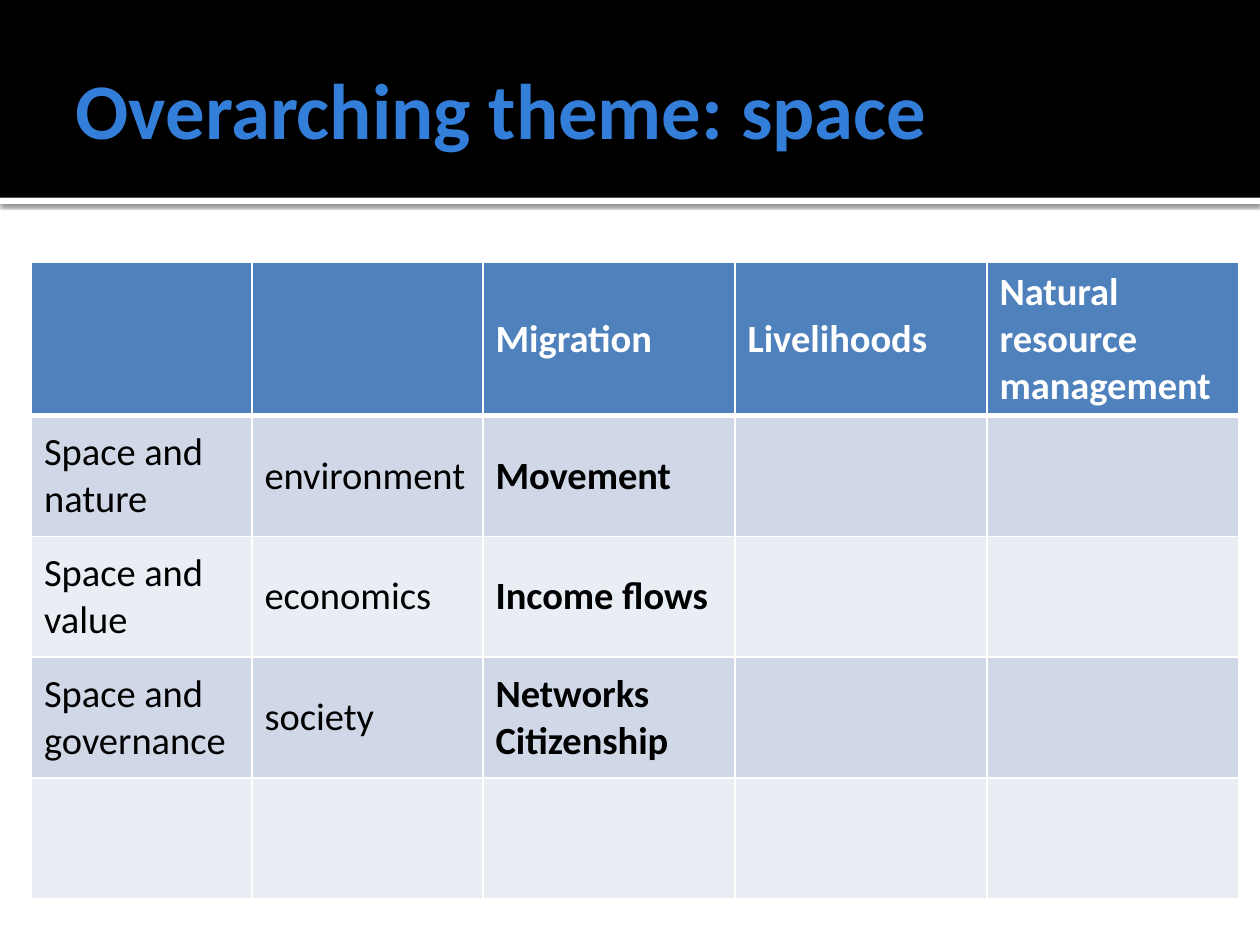
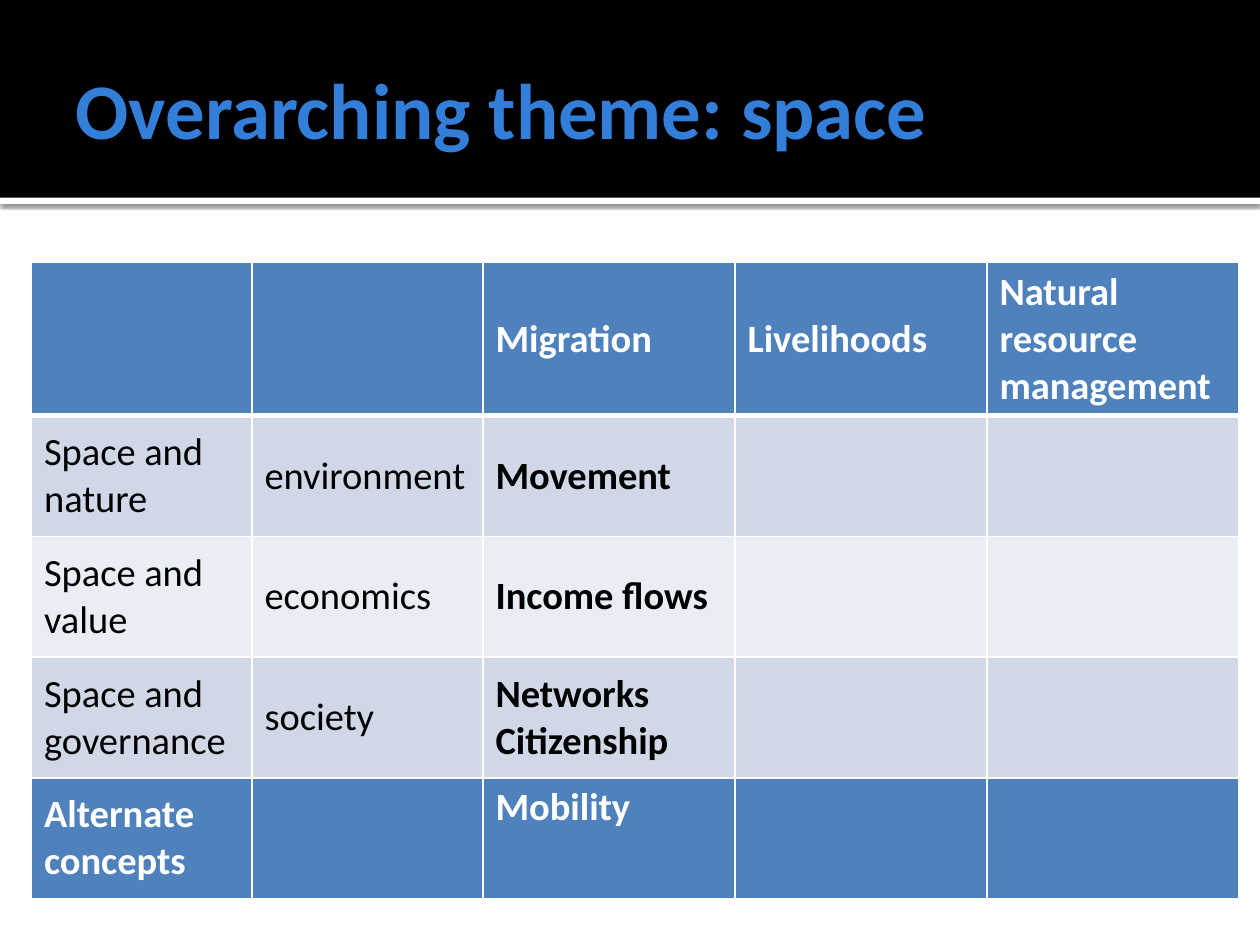
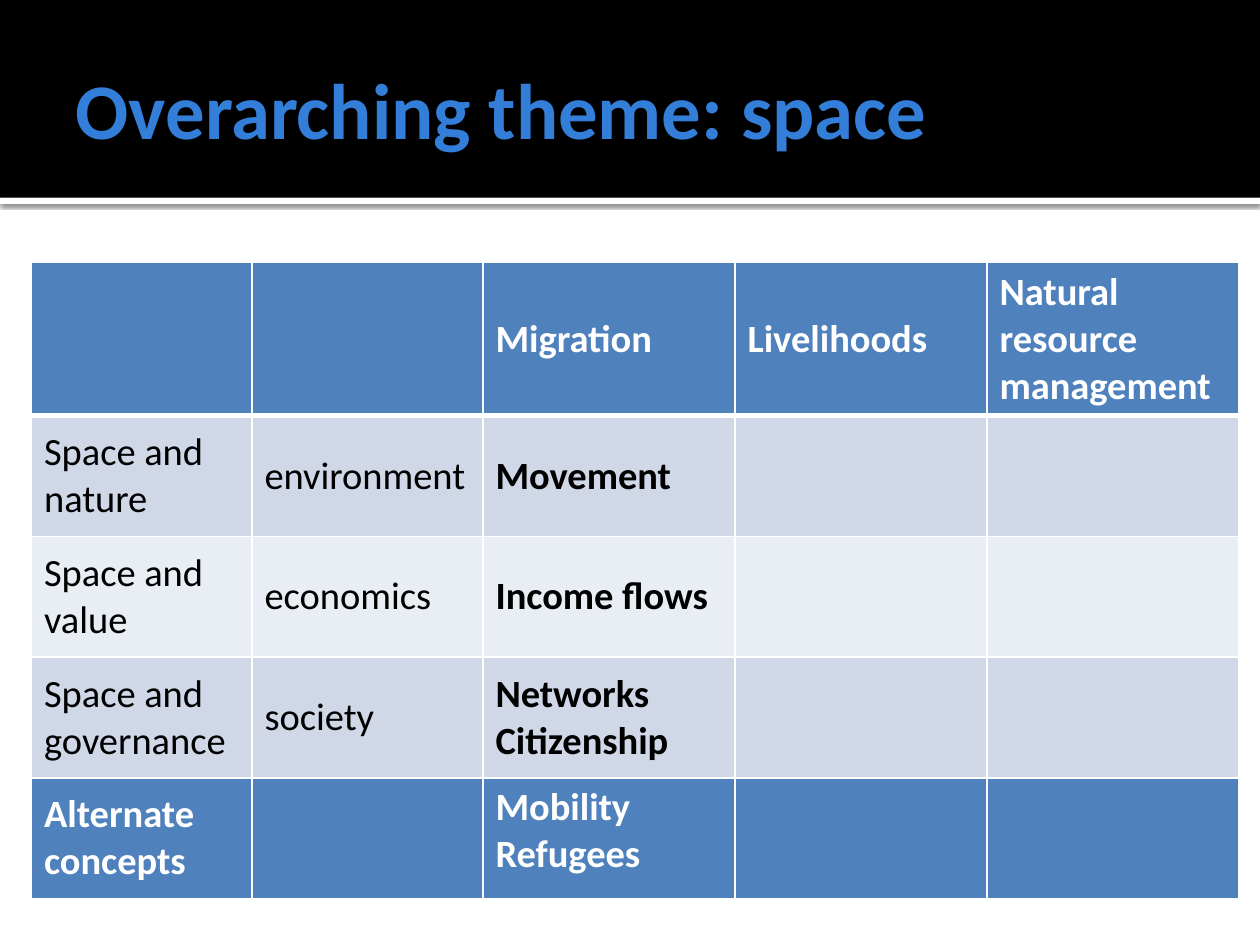
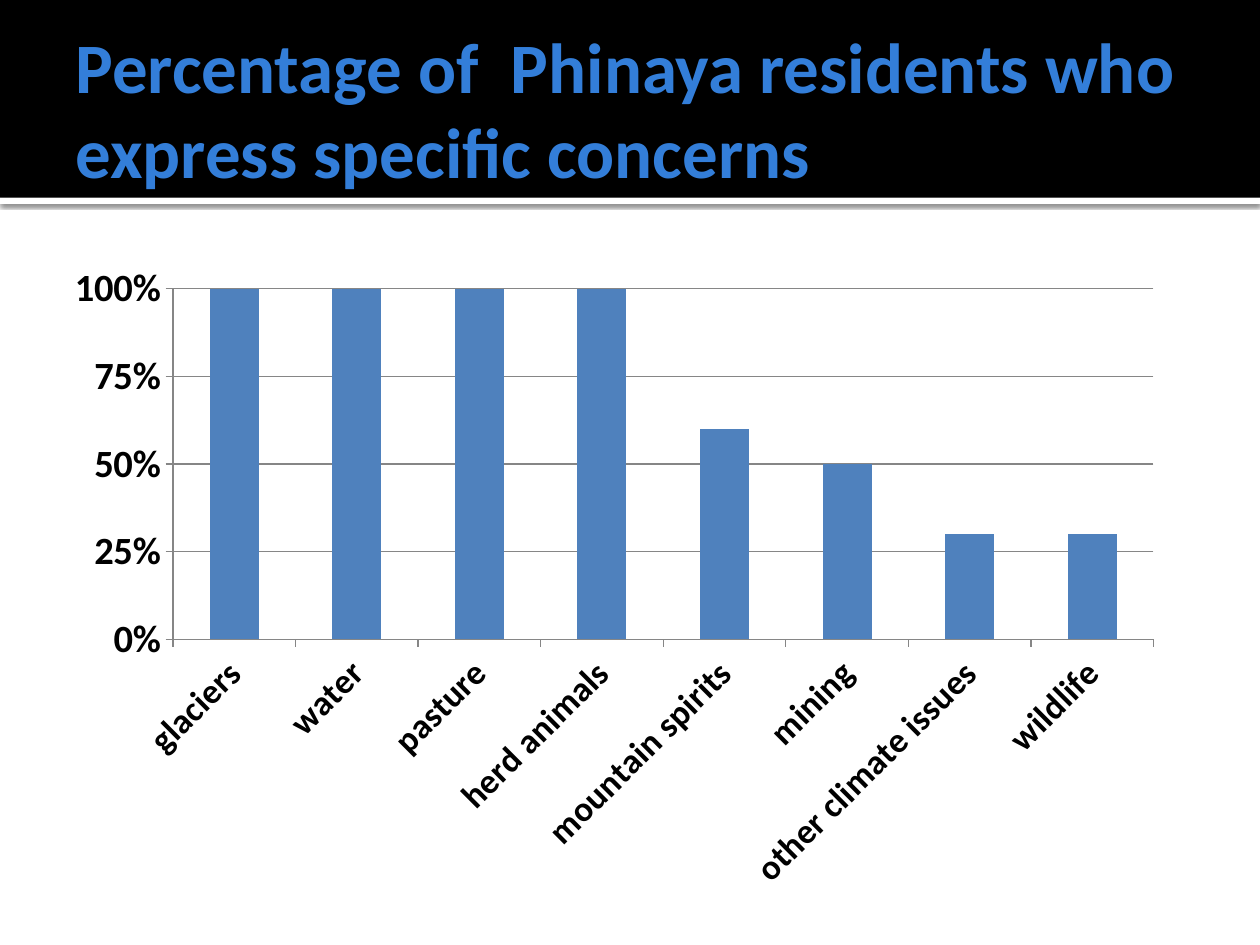
"""Build four slides on space as a theme and on residents' concerns."""
from lxml import etree
from pptx import Presentation
from pptx.chart.data import CategoryChartData
from pptx.dml.color import RGBColor
from pptx.enum.chart import XL_CHART_TYPE, XL_TICK_MARK
from pptx.enum.shapes import MSO_SHAPE
from pptx.enum.text import MSO_ANCHOR, MSO_AUTO_SIZE, PP_ALIGN
from pptx.oxml import parse_xml
from pptx.oxml.ns import nsdecls
from pptx.util import Pt

RECT = MSO_SHAPE.RECTANGLE
TOP, MIDDLE = MSO_ANCHOR.TOP, MSO_ANCHOR.MIDDLE
LEFT = PP_ALIGN.LEFT
FIXED = MSO_AUTO_SIZE.NONE
STACKED = XL_CHART_TYPE.COLUMN_STACKED
OUT = XL_TICK_MARK.OUTSIDE

BLACK = RGBColor(0x00, 0x00, 0x00)
WHITE = RGBColor(0xFF, 0xFF, 0xFF)
AZURE = RGBColor(0x33, 0x7E, 0xD9)
BLUE = RGBColor(0x4F, 0x81, 0xBD)
PALE = RGBColor(0xD0, 0xD8, 0xE8)
LIGHT = RGBColor(0xE9, 0xED, 0xF4)
GREY = RGBColor(0x86, 0x86, 0x86)

FACE = "Calibri"
WIDE, HIGH = 720, 540
BAND = 113
THEME = "Overarching theme: space"
WIDTHS = (126, 132, 144, 144, 144)
HEIGHTS = (84, 69, 69, 69, 69)
BODY = (
    ("", "", "Migration", "Livelihoods", "Natural resource management"),
    ("Space and nature", "environment", "Movement", "", ""),
    ("Space and value", "economics", "Income flows", "", ""),
    ("Space and governance", "society", "Networks\nCitizenship", "", ""),
)
LASTS = (
    ("", "", "", "", ""),
    ("Alternate concepts", "", "Mobility", "", ""),
    ("Alternate concepts", "", "Mobility\nRefugees", "", ""),
)
SHARES = {
    "glaciers": 1, "water": 1, "pasture": 1, "herd animals": 1,
    "mountain spirits": 0.6, "mining": 0.5,
    "other climate issues": 0.3, "wildlife": 0.3,
}


def apply(obj, **vals):
    """Set each named value on an object."""
    for name, val in vals.items():
        setattr(obj, name, val)


def style(font, size, color, bold):
    """Give a font its face, size, colour and weight."""
    apply(font, name=FACE, size=Pt(size), bold=bold)
    font.color.rgb = color


def paint(target, color):
    """Fill a shape or cell with one colour."""
    target.fill.solid()
    target.fill.fore_color.rgb = color


def add_band(slide, top, height, color):
    """Draw a full-width band and return it."""
    band = slide.shapes.add_shape(RECT, 0, Pt(top), Pt(WIDE), Pt(height))
    paint(band, color)
    band.line.fill.background()
    band.shadow.inherit = False
    return band


def cast_shade(shape):
    """Put a soft shadow below a shape."""
    shade = parse_xml(
        f'<a:outerShdw {nsdecls("a")} blurRad="{Pt(2.5)}" dist="{Pt(0.8)}" '
        'dir="5400000" algn="tl" rotWithShape="0"><a:srgbClr val="000000">'
        '<a:alpha val="60000"/></a:srgbClr></a:outerShdw>')
    shape._element.spPr.find("{*}effectLst").append(shade)


def dress_layout(slide):
    """Move the shared bands to the layout of a slide."""
    rule = add_band(slide, BAND, 3.6, WHITE)
    cast_shade(rule)
    head = add_band(slide, 0, BAND, BLACK)
    tree = slide.slide_layout.shapes._spTree
    for spot, band in enumerate((rule, head), 2):
        tree.insert(spot, band._element)


def add_slide(prs, text, size):
    """Add a slide with its title."""
    slide = prs.slides.add_slide(prs.slide_layouts[5])
    title = slide.shapes.title
    apply(title, left=Pt(36), top=Pt(12), width=Pt(648), height=Pt(99))
    frame = title.text_frame
    frame.text = text
    apply(frame, auto_size=FIXED, word_wrap=True, vertical_anchor=MIDDLE,
          margin_left=Pt(7.2), margin_right=Pt(3.6),
          margin_top=Pt(3.6), margin_bottom=Pt(3.6))
    para = frame.paragraphs[0]
    para.alignment = LEFT
    style(para.runs[0].font, size, AZURE, True)
    return slide


def add_edges(cell, top, base):
    """Draw white borders around a cell."""
    props = cell._tc.get_or_add_tcPr()
    sides = {"L": 1, "R": 1, "T": top, "B": base}
    for spot, (side, width) in enumerate(sides.items()):
        edge = parse_xml(f'<a:ln{side} {nsdecls("a")} w="{Pt(width)}"/>')
        fill = etree.SubElement(edge, edge.tag.replace(f"ln{side}", "solidFill"))
        tint = etree.SubElement(fill, fill.tag.replace("solidFill", "srgbClr"))
        tint.set("val", str(WHITE))
        props.insert(spot, edge)


def fill_cell(cell, text, color, bold, anchor):
    """Write text in a cell and colour it."""
    paint(cell, color)
    cell.vertical_anchor = anchor
    if text:
        cell.text = text
        ink = WHITE if color == BLUE else BLACK
        for para in cell.text_frame.paragraphs:
            style(para.runs[0].font, 22, ink, bold)


def add_grid(slide, rows):
    """Add the theme table."""
    frame = slide.shapes.add_table(
        len(rows), len(WIDTHS), Pt(18), Pt(150),
        Pt(sum(WIDTHS)), Pt(sum(HEIGHTS)))
    table = frame.table
    for col, width in zip(table.columns, WIDTHS):
        col.width = Pt(width)
    for row, height in zip(table.rows, HEIGHTS):
        row.height = Pt(height)
    end = len(rows) - 1
    for r, row in enumerate(rows):
        strong = r == 0 or (r == end and any(row))
        color = BLUE if strong else PALE if r % 2 else LIGHT
        for c, text in enumerate(row):
            cell = table.cell(r, c)
            anchor = TOP if r == end and c == 2 else MIDDLE
            fill_cell(cell, text, color, strong or c == 2, anchor)
            add_edges(cell, 3 if r == 1 else 1, 3 if r == 0 else 1)


def add_bars(slide):
    """Add the column chart of concerns."""
    data = CategoryChartData(number_format="0%")
    data.categories = list(SHARES)
    data.add_series("Series 1", list(SHARES.values()))
    chart = slide.shapes.add_chart(
        STACKED, Pt(30), Pt(144), Pt(642), Pt(372), data).chart
    apply(chart, has_legend=False, has_title=False)
    style(chart.font, 10, BLACK, False)
    plot = chart.plots[0]
    apply(plot, gap_width=150, overlap=100, vary_by_categories=False)
    paint(plot.series[0].format, BLUE)
    cats, vals = chart.category_axis, chart.value_axis
    for axis, size in ((cats, 20), (vals, 22)):
        axis.major_tick_mark = OUT
        axis.format.line.color.rgb = GREY
        style(axis.tick_labels.font, size, BLACK, True)
    cats._element.txPr.find("{*}bodyPr").set("rot", "-2700000")
    apply(vals, minimum_scale=0, maximum_scale=1, major_unit=0.25,
          has_major_gridlines=True)
    vals.major_gridlines.format.line.color.rgb = GREY
    apply(vals.tick_labels, number_format="0%", number_format_is_linked=False)


def main():
    """Build and save the deck."""
    prs = Presentation()
    apply(prs, slide_width=Pt(WIDE), slide_height=Pt(HIGH))
    for last in LASTS:
        add_grid(add_slide(prs, THEME, 45), BODY + (last,))
    slide = add_slide(
        prs, "Percentage of  Phinaya residents who express specific concerns",
        40.5)
    add_bars(slide)
    dress_layout(slide)
    prs.save("out.pptx")


if __name__ == "__main__":
    main()
